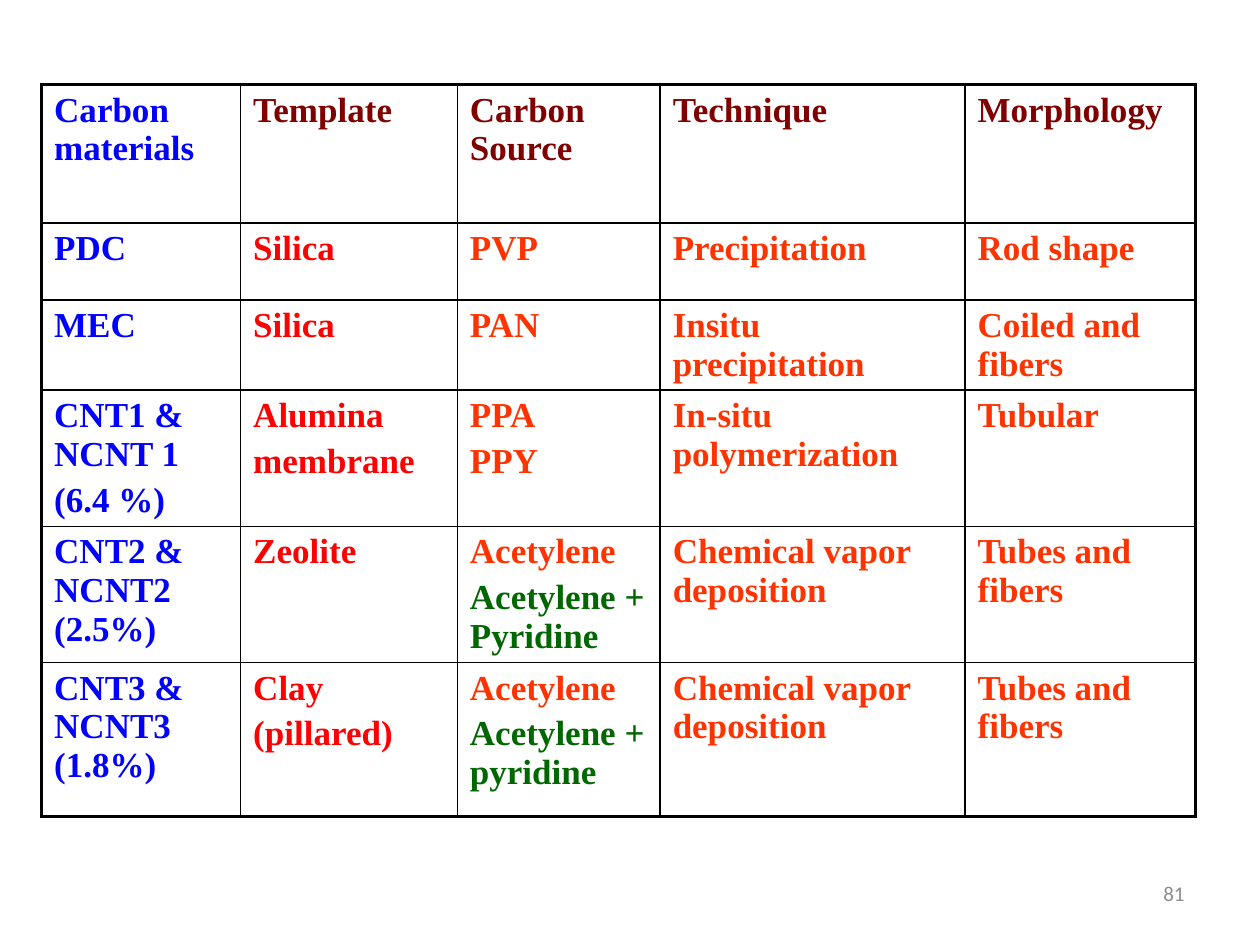
from lxml import etree
from pptx import Presentation
from pptx.dml.color import RGBColor
from pptx.enum.text import MSO_ANCHOR, PP_ALIGN
from pptx.oxml.ns import qn
from pptx.util import Inches, Pt

RIGHT = PP_ALIGN.RIGHT
MIDDLE = MSO_ANCHOR.MIDDLE
BLANK_LAYOUT = 6
BLUE, MAROON, RED, ORANGE, GREEN = "0000FF", "800000", "FF0000", "FF3300", "006600"
BLACK, GRAY = "000000", "8C8C8C"
COLUMN_COLORS = [BLUE, RED, ORANGE, ORANGE, ORANGE]
COLUMN_WIDTHS = [1.58, 1.72, 1.61, 2.42, 1.83]
ROW_HEIGHTS = [1.1, 0.61, 0.68, 0.84, 0.84, 1.22]
OUTER_LINE, INNER_LINE = 2.25, 1
ROWS = [
    ["Carbon materials", "Template", "Carbon Source", "Technique", "Morphology"],
    ["PDC", "Silica", "PVP", "Precipitation", "Rod shape"],
    ["MEC", "Silica", "PAN", "Insitu precipitation", "Coiled and fibers"],
    ["CNT1 & NCNT 1\n(6.4 %)", "Alumina\nmembrane", "PPA\nPPY",
     "In-situ polymerization", "Tubular"],
    ["CNT2 & NCNT2 (2.5%)", "Zeolite", "Acetylene\nAcetylene + Pyridine",
     "Chemical vapor deposition", "Tubes and fibers"],
    ["CNT3 & NCNT3 (1.8%)", "Clay\n(pillared)", "Acetylene\nAcetylene + pyridine",
     "Chemical vapor deposition", "Tubes and fibers"],
]


def style_font(font, name, size, color, bold=False):
    """Set the face, size, colour and weight of a font."""
    font.name, font.size, font.bold = name, Pt(size), bold
    font.color.rgb = RGBColor.from_string(color)


def set_border(cell, side, width):
    """Draw one black border of a cell; side is L, R, T or B."""
    properties = cell._tc.get_or_add_tcPr()
    line = etree.SubElement(properties, qn(f"a:ln{side}"), w=str(Pt(width)))
    fill = etree.SubElement(line, qn("a:solidFill"))
    etree.SubElement(fill, qn("a:srgbClr"), val=BLACK)


def text_color(row, column, text):
    """Choose a colour by column, with exceptions for headings and mixtures."""
    if row == 0 and column > 0:
        return MAROON
    return GREEN if "+" in text else COLUMN_COLORS[column]


def fill_cell(cell, row, column):
    """Write, colour and frame one cell."""
    cell.text_frame.text = ROWS[row][column]
    for index, para in enumerate(cell.text_frame.paragraphs):
        if index:
            para.space_before = Pt(4)
        for span in para.runs:
            style_font(span.font, "Times New Roman", 20,
                       text_color(row, column, span.text), bold=True)
    outer_sides = {
        "L": column == 0,
        "R": column == len(COLUMN_WIDTHS) - 1,
        "T": row == 0,
        "B": row == len(ROWS) - 1,
    }
    for side, is_outer in outer_sides.items():
        set_border(cell, side, OUTER_LINE if is_outer else INNER_LINE)
    cell.fill.background()


def add_materials_table(page):
    """Add the table of carbon materials and their synthesis."""
    frame = page.shapes.add_table(
        len(ROWS), len(COLUMN_WIDTHS), Inches(0.33), Inches(0.67),
        Inches(sum(COLUMN_WIDTHS)), Inches(sum(ROW_HEIGHTS)))
    table = frame.table
    table.first_row = table.horz_banding = False
    for column, width in enumerate(COLUMN_WIDTHS):
        table.columns[column].width = Inches(width)
    for row, height in enumerate(ROW_HEIGHTS):
        table.rows[row].height = Inches(height)
        for column in range(len(COLUMN_WIDTHS)):
            fill_cell(table.cell(row, column), row, column)


def add_page_number(page, number):
    """Add the page number at the lower right."""
    box = page.shapes.add_textbox(Inches(7.17), Inches(6.83), Inches(2.33), Inches(0.52))
    frame = box.text_frame
    frame.word_wrap = True
    frame.vertical_anchor = MIDDLE
    frame.text = number
    para = frame.paragraphs[0]
    para.alignment = RIGHT
    style_font(para.runs[0].font, "Calibri", 12, GRAY)


def main():
    """Build and save the deck."""
    deck = Presentation()
    deck.slide_width, deck.slide_height = Inches(10), Inches(7.5)
    page = deck.slides.add_slide(deck.slide_layouts[BLANK_LAYOUT])
    add_materials_table(page)
    add_page_number(page, "81")
    deck.save("out.pptx")


if __name__ == "__main__":
    main()
